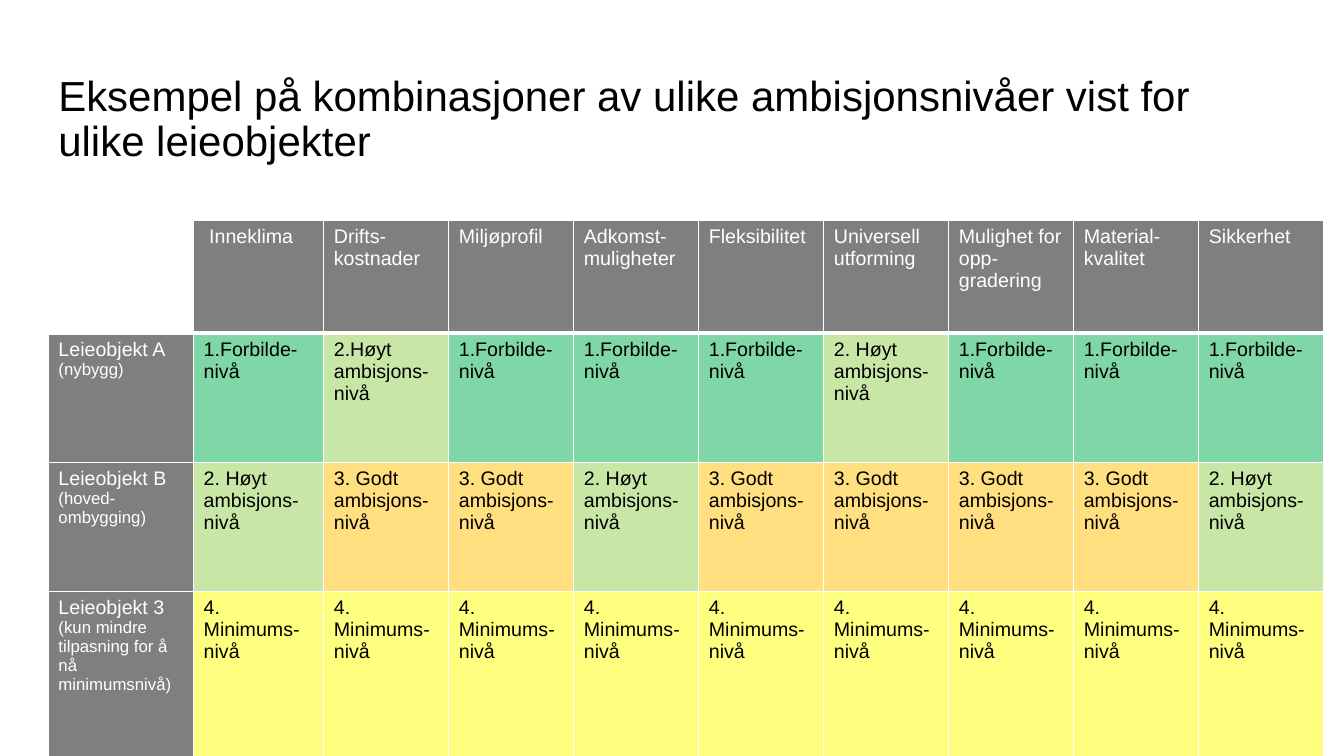
from lxml import etree
from pptx import Presentation
from pptx.dml.color import RGBColor
from pptx.enum.text import MSO_ANCHOR
from pptx.oxml.ns import qn
from pptx.util import Cm, Pt

MIDDLE = MSO_ANCHOR.MIDDLE

COLOURS = {
    "white": "FFFFFF",
    "black": "000000",
    "exemplary": "00B151",
    "high": "92D050",
    "good": "FFC000",
    "minimum": "FFFF00",
}

TITLE = "Eksempel på kombinasjoner av ulike ambisjonsnivåer vist for ulike leieobjekter"

CRITERIA = [
    " Inneklima", "Drifts-kostnader", "Miljøprofil", "Adkomst-muligheter",
    "Fleksibilitet", "Universell utforming", "Mulighet for opp-gradering",
    "Material-kvalitet", "Sikkerhet",
]

LEVELS = {
    "1": (["1.Forbilde-nivå"], "exemplary"),
    "1 ": (["1.Forbilde- nivå"], "exemplary"),
    "2": (["2. Høyt ambisjons-nivå"], "high"),
    "2.": (["2.Høyt ambisjons-nivå"], "high"),
    "3": (["3. Godt ambisjons-nivå"], "good"),
    "4": (["4.", "Minimums-nivå"], "minimum"),
}

RENTALS = [
    ("Leieobjekt A", "(nybygg)", ["1", "2.", "1 ", "1 ", "1", "2", "1", "1", "1"]),
    ("Leieobjekt B", "(hoved-ombygging)", ["2", "3", "3", "2", "3", "3", "3", "3", "2"]),
    ("Leieobjekt 3", "(kun mindre tilpasning for å nå minimumsnivå)", ["4"] * 9),
]

TITLE_BOX = (Cm(1.22), Cm(1.19), Cm(30.56), Cm(3.68))
COLUMN_WIDTHS = [3.66, 3.28] + [3.15] * 8
ROW_HEIGHTS = [2.84, 3.25, 3.25, 4.22]
GRID_LEFT, GRID_TOP = 1.22, 5.56
THIN, THICK = Pt(1), Pt(3)
OPACITY = "50000"

TITLE_FONT = {"name": "Arial", "size": Pt(30)}
CELL_FONT = {"name": "Arial", "size": Pt(14)}
NOTE_FONT = {"name": "Arial", "size": Pt(12)}


def write(paragraph, text, font_format, colour):
    run = paragraph.add_run()
    run.text = text
    for attribute, value in font_format.items():
        setattr(run.font, attribute, value)
    run.font.color.rgb = RGBColor.from_string(COLOURS[colour])


def draw_borders(cell, widths):
    properties = cell._tc.get_or_add_tcPr()
    for side, width in widths.items():
        line = etree.SubElement(properties, qn(f"a:ln{side}"), w=str(width))
        fill = etree.SubElement(line, qn("a:solidFill"))
        etree.SubElement(fill, qn("a:srgbClr"), val=COLOURS["white"])


def tint(cell, colour):
    cell.fill.solid()
    cell.fill.fore_color.rgb = RGBColor.from_string(COLOURS[colour])
    shade = cell._tc.tcPr.find(qn("a:solidFill")).find(qn("a:srgbClr"))
    etree.SubElement(shade, qn("a:alpha"), val=OPACITY)


def content_rows():
    yield [([], "white", "white")] + [
        ([(name, CELL_FONT)], "white", "black") for name in CRITERIA
    ]
    for name, note, codes in RENTALS:
        heading = ([(name, CELL_FONT), (note, NOTE_FONT)], "white", "black")
        ratings = [
            ([(line, CELL_FONT) for line in LEVELS[code][0]], "black", LEVELS[code][1])
            for code in codes
        ]
        yield [heading] + ratings


def add_title(slide):
    frame = slide.shapes.add_textbox(*TITLE_BOX).text_frame
    frame.word_wrap = True
    frame.vertical_anchor = MIDDLE
    frame.paragraphs[0].line_spacing = 0.9
    write(frame.paragraphs[0], TITLE, TITLE_FONT, "black")


def add_ambitions(slide):
    ambitions = slide.shapes.add_table(
        len(ROW_HEIGHTS), len(COLUMN_WIDTHS), Cm(GRID_LEFT), Cm(GRID_TOP),
        Cm(sum(COLUMN_WIDTHS)), Cm(sum(ROW_HEIGHTS)),
    ).table
    ambitions.horz_banding = False
    for column, width in zip(ambitions.columns, COLUMN_WIDTHS):
        column.width = Cm(width)
    for row, height in zip(ambitions.rows, ROW_HEIGHTS):
        row.height = Cm(height)

    for r, entries in enumerate(content_rows()):
        borders = {
            "L": THIN,
            "R": THIN,
            "T": THICK if r == 1 else THIN,
            "B": THICK if r == 0 else THIN,
        }
        for c, (lines, ink, background) in enumerate(entries):
            cell = ambitions.cell(r, c)
            draw_borders(cell, borders)
            tint(cell, background)
            frame = cell.text_frame
            for i, (text, font_format) in enumerate(lines):
                paragraph = frame.add_paragraph() if i else frame.paragraphs[0]
                write(paragraph, text, font_format, ink)


def main():
    deck = Presentation()
    deck.slide_width, deck.slide_height = Cm(33.87), Cm(19.05)
    slide = deck.slides.add_slide(deck.slide_layouts[6])
    add_title(slide)
    add_ambitions(slide)
    deck.save("out.pptx")


if __name__ == "__main__":
    main()
